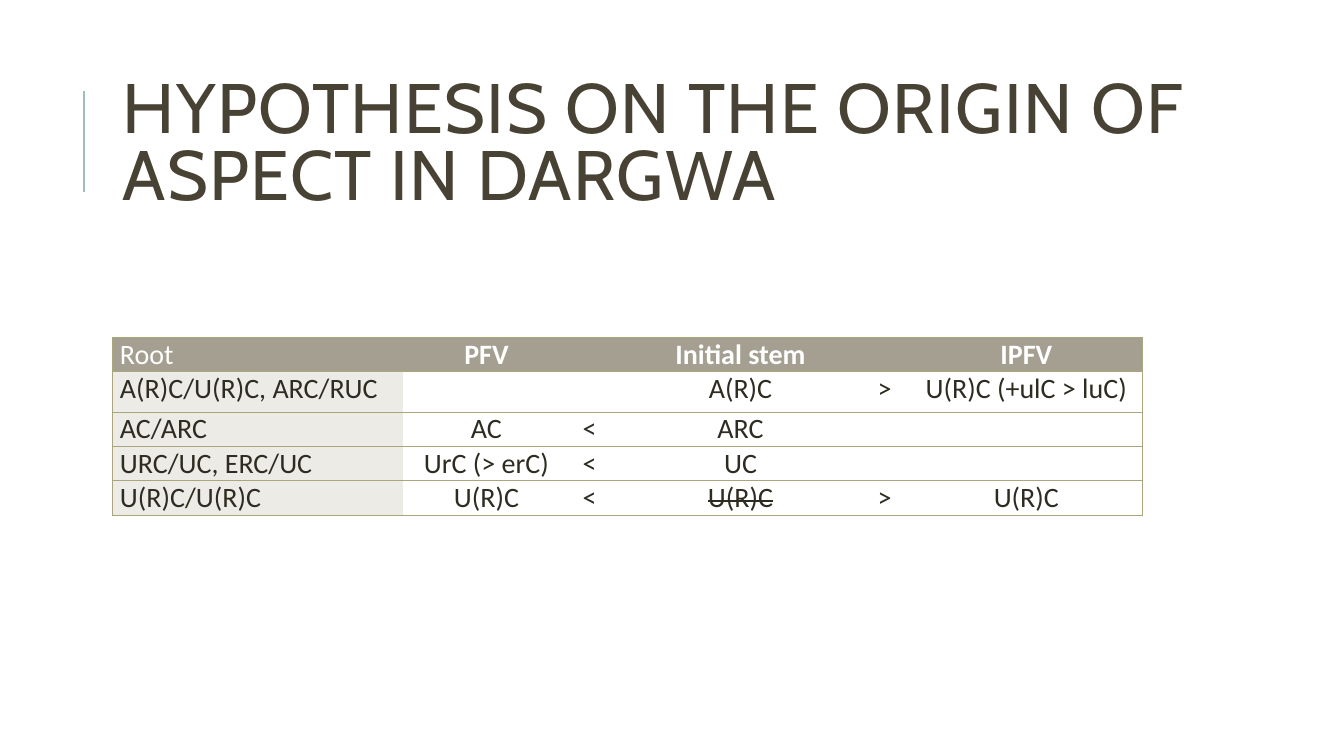
"""Build the slide on the origin of aspect in Dargwa."""
from dataclasses import dataclass

from lxml.etree import SubElement
from pptx import Presentation
from pptx.dml.color import RGBColor
from pptx.enum.shapes import MSO_CONNECTOR
from pptx.enum.text import MSO_ANCHOR, PP_ALIGN
from pptx.oxml.ns import qn
from pptx.util import Inches, Pt

BORDER = "A9A57C"
COLS = [2.88, 1.65, 0.46, 2.47, 0.45, 2.3]
HEADER_H, FIRST_H, ROW_H = 0.34, 0.4, 0.34


@dataclass
class Row:
    cells: list[str]
    height: float = ROW_H
    header: bool = False
    struck: int | None = None


ROWS = [
    Row(["Root", "PFV", "", "Initial stem", "", "IPFV"], HEADER_H, header=True),
    Row(["A(R)C/U(R)C, ARC/RUC", "", "", "A(R)C", "> ", "U(R)C (+ulC > luC)"], FIRST_H),
    Row(["AC/ARC", "AC", "< ", "ARC", "", ""]),
    Row(["URC/UC, ERC/UC", "UrC (> erC)", "< ", "UC", "", ""]),
    Row(["U(R)C/U(R)C", "U(R)C", "< ", "U(R)C", "> ", "U(R)C"], struck=3),
]


def rgb(value: str) -> RGBColor:
    return RGBColor.from_string(value)


def apply(obj, formats: dict) -> None:
    for name, value in formats.items():
        setattr(obj, name, value)


def add_run(p, text: str, size: float, font: str, color: str, bold: bool = False):
    r = p.add_run()
    r.text = text
    apply(r.font, {"size": Pt(size), "name": font, "bold": bold})
    r.font.color.rgb = rgb(color)
    return r


def add_rule(s) -> None:
    x = Inches(0.83)
    sp = s.shapes.add_connector(MSO_CONNECTOR.STRAIGHT, x, Inches(1.9), x, Inches(0.9))
    sp.line.color.rgb = rgb("9CBEBD")
    sp.line.width = Pt(1.5)
    SubElement(sp._element.spPr, qn("a:effectLst"))


def add_title(s, text: str) -> None:
    sp = s.shapes.add_textbox(Inches(1.12), Inches(0.64), Inches(10.84), Inches(1.64))
    tf = sp.text_frame
    apply(tf, {"word_wrap": True, "vertical_anchor": MSO_ANCHOR.MIDDLE})
    p = tf.paragraphs[0]
    p.line_spacing = 0.8
    r = add_run(p, text, 50, "Cabin", "474233")
    r.font._element.set("spc", "100")


def set_borders(cell, sides: dict[str, bool]) -> None:
    tc_pr = cell._tc.get_or_add_tcPr()
    for side, shown in sides.items():
        ln = SubElement(tc_pr, qn(f"a:ln{side}"), w=str(Pt(0.75)))
        if shown:
            fill = SubElement(ln, qn("a:solidFill"))
            SubElement(fill, qn("a:srgbClr"), val=BORDER)
        else:
            SubElement(ln, qn("a:noFill"))


def fill_cell(cell, row: Row, col: int) -> None:
    apply(cell, {"margin_left": Inches(0.07), "margin_right": Inches(0.07),
                 "margin_top": 0, "margin_bottom": 0})
    set_borders(cell, {"L": col == 0, "R": col == len(COLS) - 1,
                       "T": True, "B": True})
    if row.header or col == 0:
        cell.fill.solid()
        cell.fill.fore_color.rgb = rgb("A49F91" if row.header else "EDEBE6")
    else:
        cell.fill.background()
    p = cell.text_frame.paragraphs[0]
    p.alignment = PP_ALIGN.CENTER if col else PP_ALIGN.JUSTIFY
    if row.cells[col]:
        color = "FFFFFF" if row.header else "2E2B21"
        r = add_run(p, row.cells[col], 20, "Calibri", color, row.header and col > 0)
        if col == row.struck:
            r.font._element.set("strike", "sngStrike")


def add_stem_table(s) -> None:
    height = sum(row.height for row in ROWS)
    table = s.shapes.add_table(len(ROWS), len(COLS), Inches(1.12), Inches(3.35),
                               Inches(sum(COLS)), Inches(height)).table
    apply(table, {"first_row": False, "horz_banding": False})
    for column, width in zip(table.columns, COLS):
        column.width = Inches(width)
    for i, row in enumerate(ROWS):
        table.rows[i].height = Inches(row.height)
        for col in range(len(COLS)):
            fill_cell(table.cell(i, col), row, col)


def main() -> None:
    prs = Presentation()
    apply(prs, {"slide_width": Inches(13.33), "slide_height": Inches(7.5)})
    s = prs.slides.add_slide(prs.slide_layouts[6])
    add_rule(s)
    add_title(s, "HYPOTHESIS ON THE ORIGIN OF ASPECT IN DARGWA")
    add_stem_table(s)
    prs.save("out.pptx")


if __name__ == "__main__":
    main()
